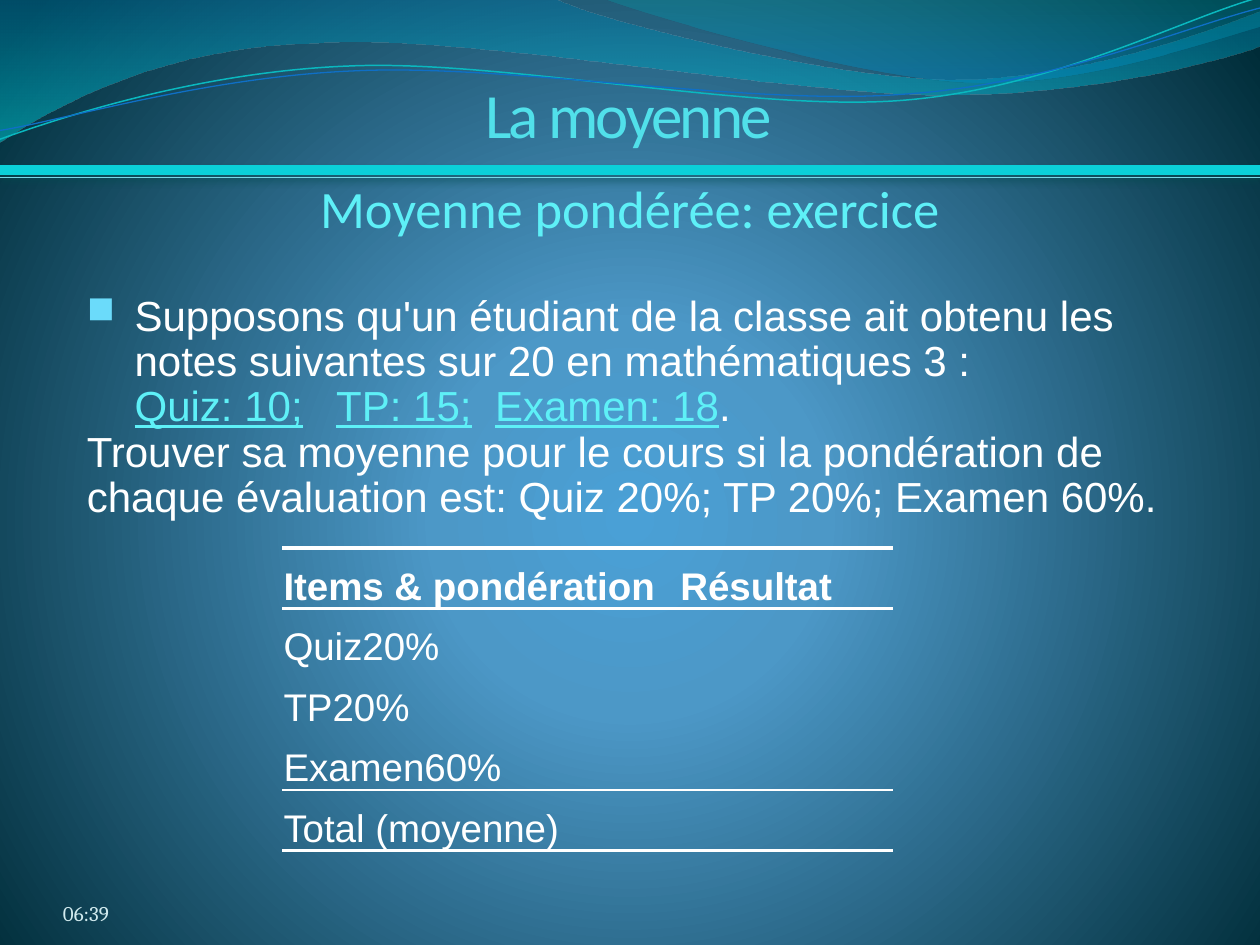
"""Build the weighted-average exercise slide."""
from dataclasses import dataclass
from math import cos, radians, sin
from typing import NamedTuple

from lxml.etree import SubElement
from pptx import Presentation
from pptx.dml.color import RGBColor
from pptx.enum.shapes import MSO_CONNECTOR
from pptx.enum.text import MSO_ANCHOR, PP_ALIGN
from pptx.oxml import parse_xml
from pptx.oxml.ns import qn
from pptx.util import Pt

PX = 9144
NS = 'xmlns:a="http://schemas.openxmlformats.org/drawingml/2006/main"'


@dataclass(frozen=True)
class Theme:
    white: str = "FFFFFF"
    title: str = "51E0EA"
    accent: str = "5EF0F7"
    bullet: str = "6BDBFA"
    time: str = "D1EAEE"
    bar: str = "0BD0D9"
    hairline: str = "77D9E8"
    bar_shadow: str = "024B4E"
    teal_curve: str = "0AB8BF"
    blue_curve: str = "0F6FC6"
    background: tuple = ((0, "4AA0D6", 100), (25, "4C98C7", 100), (100, "002C38", 100))
    wide_wave: tuple = ((0, "0074A1", 45), (100, "00C6CF", 55))
    right_wave: tuple = ((0, "00A1A9", 30), (80, "008BBF", 45))
    heading_font: str = "Calibri"
    body_font: str = "Arial"
    time_font: str = "Cambria"
    title_size: int = 36
    subtitle_size: int = 30
    body_size: int = 24
    table_size: int = 22
    time_size: int = 12


T = Theme()


class Box(NamedTuple):
    x: int
    y: int
    w: int
    h: int


class Wave(NamedTuple):
    start: tuple
    segments: tuple
    stops: tuple = ()
    color: str = ""
    width: float = 0
    tilt: float = 0
    center: tuple = (0, 0)


class Rule(NamedTuple):
    y: int
    color: str
    width: float
    effects: str = ""


WAVES = (
    Wave((0, 0), (((440, -1),), ((476, 17), (664, 63), (758, 63)),
                  ((853, 63), (958, 26), (1000, 9)), ((1001, 36),),
                  ((983, 44), (870, 76), (746, 75)), ((622, 75), (382, 28), (257, 34)),
                  ((129, 36), (46, 83), (-1, 113))), stops=T.wide_wave),
    Wave((479, -1), (((509, 11), (682, 62), (769, 65)),
                     ((856, 69), (961, 32), (1000, 21)), ((1000, 0),)), stops=T.right_wave),
    Wave((0, 111), (((48, 93), (158, 57), (277, 52)), ((395, 47), (593, 89), (713, 80)),
                    ((833, 71), (938, 15), (998, -2))),
         color=T.teal_curve, width=0.85, tilt=2.7, center=(499, 57)),
    Wave((0, 104), (((47, 96), (164, 61), (283, 56)), ((403, 51), (597, 84), (717, 75)),
                    ((836, 67), (941, 21), (1000, 6))),
         color=T.blue_curve, width=0.75, tilt=2.7, center=(499, 59)),
)

RULES = (
    Rule(135, T.bar, 6, f'<a:outerShdw blurRad="57150" dist="38100" dir="5400000" rotWithShape="0">'
         f'<a:srgbClr val="{T.bar_shadow}"><a:alpha val="48000"/></a:srgbClr></a:outerShdw>'),
    Rule(141, T.hairline, 0.75),
)

ROWS = (("Items & pondération", "Résultat"), ("Quiz20%", ""), ("TP20%", ""),
        ("Examen60%", ""), ("Total (moyenne)", ""))
ROW_LINES = (2.25, 2.25, 0, 0, 1, 2.25)


def set_gradient(fill, root, stops: tuple, direction: str) -> None:
    fill.gradient()
    old = next(root.iter(qn("a:gradFill")))
    gs = "".join(f'<a:gs pos="{pos * 1000}"><a:srgbClr val="{color}"><a:alpha val="{alpha * 1000}"/>'
                 f'</a:srgbClr></a:gs>' for pos, color, alpha in stops)
    old.getparent().replace(old, parse_xml(
        f'<a:gradFill {NS} rotWithShape="1"><a:gsLst>{gs}</a:gsLst>{direction}</a:gradFill>'))


def draw_wave(s, wave: Wave) -> None:
    cx, cy = wave.center
    c, d = cos(radians(wave.tilt)), sin(radians(wave.tilt))

    def turn(pt: tuple) -> tuple:
        dx, dy = pt[0] - cx, pt[1] - cy
        return round(cx + dx * c - dy * d), round(cy + dx * d + dy * c)

    builder = s.shapes.build_freeform(*turn(wave.start), scale=PX)
    builder.add_line_segments([turn(pt) for seg in wave.segments for pt in seg],
                              close=bool(wave.stops))
    sp = builder.convert_to_shape()
    sp.shadow.inherit = False
    sp.rotation = -wave.tilt
    steps = iter(list(sp.element.iter(qn("a:lnTo"))))
    for seg in wave.segments:
        group = [next(steps) for _ in seg]
        if len(group) == 3:
            group[0].tag
            curve = SubElement(group[0].getparent(), qn("a:cubicBezTo"))
            group[0].addprevious(curve)
            for step in group:
                curve.append(step[0])
                step.getparent().remove(step)
    if wave.stops:
        set_gradient(sp.fill, sp.element, wave.stops, '<a:lin ang="5400000" scaled="0"/>')
        sp.line.fill.background()
    else:
        sp.fill.background()
        sp.line.color.rgb = RGBColor.from_string(wave.color)
        sp.line.width = Pt(wave.width)


def write(p, text: str, *, size: int, font: str, color: str = T.white, bold: bool = False,
          underline: bool = False, spacing: int = 0):
    r = p.add_run()
    r.text = text
    r.font.size, r.font.name = Pt(size), font
    r.font.bold, r.font.underline = bold, underline
    r.font.color.rgb = RGBColor.from_string(color)
    if spacing:
        r.font._element.set("spc", str(spacing))
    return r


def add_text_frame(s, box: Box, margins: tuple = (0, 0, 0, 0), anchor=MSO_ANCHOR.TOP):
    tf = s.shapes.add_textbox(*(v * PX for v in box)).text_frame
    tf.word_wrap = True
    tf.vertical_anchor = anchor
    tf.margin_left, tf.margin_top, tf.margin_right, tf.margin_bottom = (m * PX for m in margins)
    return tf


def draw_body(s) -> None:
    tf = add_text_frame(s, Box(59, 150, 918, 577), (10, 84, 10, 5))
    style = {"size": T.body_size, "font": T.body_font}
    paras = [tf.paragraphs[0], tf.add_paragraph(), tf.add_paragraph()]
    for p in paras:
        p.line_spacing = 0.9
    first, marks, task = paras
    ppr = first._p.get_or_add_pPr()
    ppr.set("marL", str(38 * PX))
    ppr.set("indent", str(-38 * PX))
    for xml in (f'<a:buClr {NS}><a:srgbClr val="{T.bullet}"/></a:buClr>',
                f'<a:buSzPct {NS} val="90000"/>', f'<a:buChar {NS} char="■"/>'):
        ppr.append(parse_xml(xml))
    write(first, "Supposons qu'un étudiant de la classe ait obtenu les notes suivantes "
                 "sur 20 en mathématiques 3 :", **style)
    tabs = "".join(f'<a:tab pos="{x * PX}" algn="l"/>' for x in (38, 198, 324))
    marks._p.get_or_add_pPr().append(parse_xml(f"<a:tabLst {NS}>{tabs}</a:tabLst>"))
    write(marks, "\t", **style)
    write(marks, "Quiz: 10;\tTP: 15;\tExamen: 18", color=T.accent, underline=True, **style)
    write(marks, ".", **style)
    write(task, "Trouver sa moyenne pour le cours si la pondération de chaque évaluation est: "
                "Quiz 20%; TP 20%; Examen 60%.", **style)


def draw_line(s, text: str, box: Box, *, margins: tuple = (0, 0, 0, 0), anchor=MSO_ANCHOR.BOTTOM,
              align=PP_ALIGN.CENTER, **style) -> None:
    p = add_text_frame(s, box, margins, anchor).paragraphs[0]
    p.alignment = align
    write(p, text, **style)


def border(edge: str, width: float):
    fill = f'<a:solidFill><a:srgbClr val="{T.white}"/></a:solidFill>' if width else "<a:noFill/>"
    return parse_xml(f'<a:{edge} {NS} w="{Pt(width)}">{fill}</a:{edge}>')


def draw_table(s, box: Box, widths: tuple) -> None:
    table = s.shapes.add_table(len(ROWS), len(widths), *(v * PX for v in box)).table
    table.first_row = table.horz_banding = False
    for col, width in zip(table.columns, widths):
        col.width = width * PX
    for i, row in enumerate(ROWS):
        table.rows[i].height = box.h // len(ROWS) * PX
        for j, text in enumerate(row):
            cell = table.cell(i, j)
            cell.fill.background()
            cell.vertical_anchor = MSO_ANCHOR.BOTTOM
            cell.margin_left = cell.margin_top = cell.margin_right = PX
            cell.margin_bottom = 0
            edges = {"lnL": 0, "lnR": 0, "lnT": ROW_LINES[i], "lnB": ROW_LINES[i + 1]}
            for k, (edge, width) in enumerate(edges.items()):
                cell._tc.get_or_add_tcPr().insert(k, border(edge, width))
            if text:
                write(cell.text_frame.paragraphs[0], text, size=T.table_size,
                      font=T.body_font, bold=i == 0)


def draw_rule(s, rule: Rule) -> None:
    line = s.shapes.add_connector(MSO_CONNECTOR.STRAIGHT, 0, rule.y * PX, 1000 * PX, rule.y * PX)
    line.line.color.rgb = RGBColor.from_string(rule.color)
    line.line.width = Pt(rule.width)
    line._element.spPr.append(parse_xml(f"<a:effectLst {NS}>{rule.effects}</a:effectLst>"))


def main() -> None:
    prs = Presentation()
    prs.slide_width, prs.slide_height = 1000 * PX, 750 * PX
    s = prs.slides.add_slide(prs.slide_layouts[6])
    set_gradient(s.background.fill, s.element, T.background,
                 '<a:path path="circle"><a:fillToRect l="10000" t="110000" r="10000" b="100000"/></a:path>')
    for wave in WAVES:
        draw_wave(s, wave)
    draw_body(s)
    draw_line(s, "06:39", Box(50, 695, 233, 40), align=PP_ALIGN.LEFT,
              size=T.time_size, font=T.time_font, color=T.time)
    draw_line(s, "La moyenne", Box(0, 73, 1000, 47), margins=(0, 0, 2, 0),
              size=T.title_size, font=T.heading_font, color=T.title, spacing=-150)
    draw_line(s, "Moyenne pondérée: exercice", Box(0, 135, 1000, 61), margins=(10, 5, 10, 5),
              anchor=MSO_ANCHOR.TOP, size=T.subtitle_size, font=T.heading_font, color=T.accent)
    draw_table(s, Box(224, 435, 485, 240), (315, 170))
    for rule in RULES:
        draw_rule(s, rule)
    prs.save("out.pptx")


if __name__ == "__main__":
    main()
